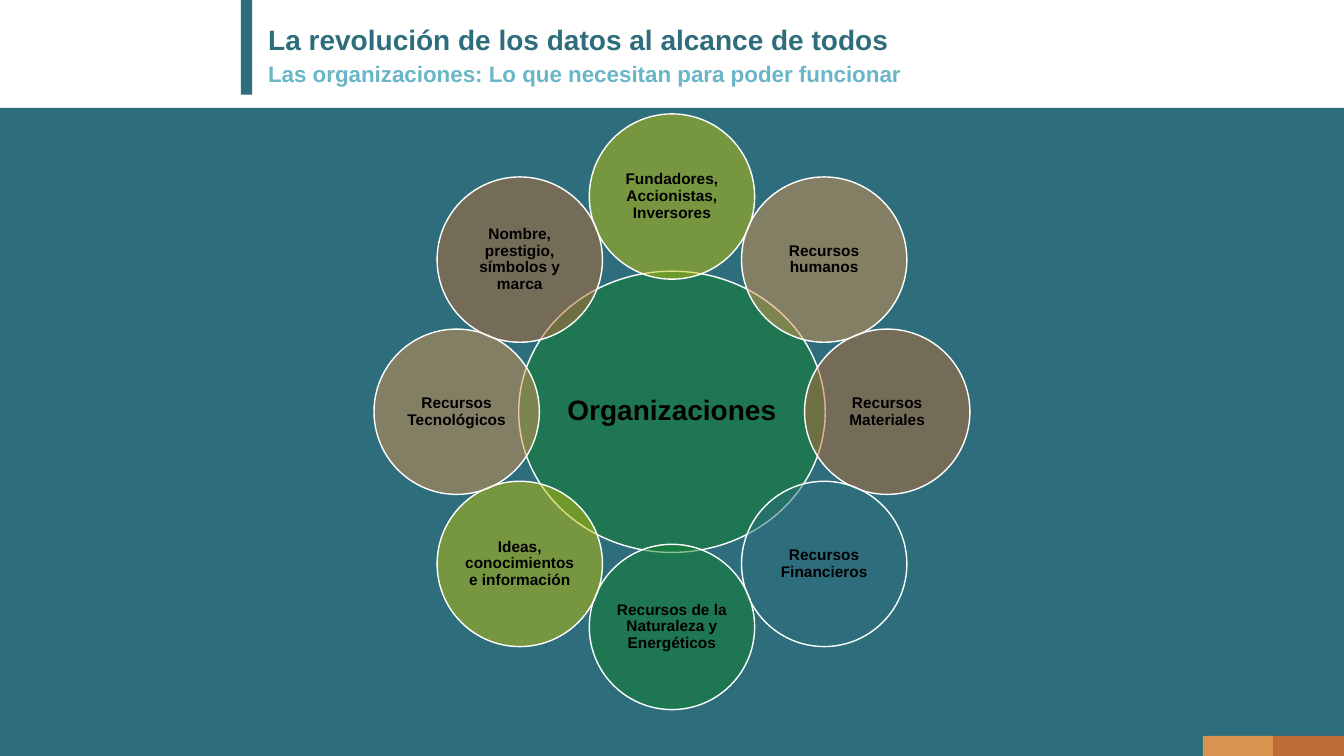
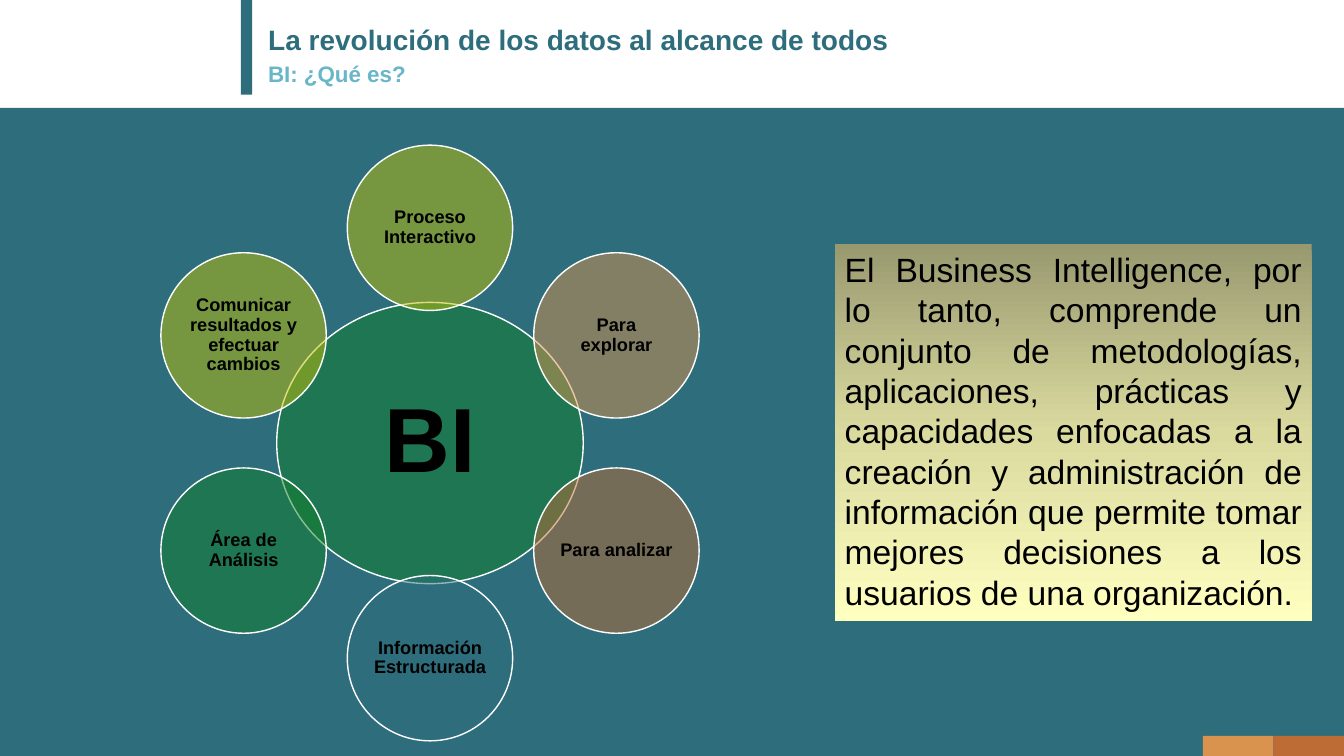
from copy import deepcopy
from itertools import cycle
from math import cos, pi, sin

from pptx import Presentation
from pptx.dml.color import RGBColor
from pptx.enum.shapes import MSO_SHAPE
from pptx.enum.text import MSO_ANCHOR, MSO_AUTO_SIZE, PP_ALIGN
from pptx.oxml.ns import qn
from pptx.util import Pt

PX = 9144  # EMU per px, 100 px to the inch
WIDTH, HEIGHT = 1333, 750
FONT = "Arial"
RECTANGLE, ELLIPSE = MSO_SHAPE.RECTANGLE, MSO_SHAPE.OVAL
TOP, MIDDLE = MSO_ANCHOR.TOP, MSO_ANCHOR.MIDDLE
LEFT, CENTER, JUSTIFY = PP_ALIGN.LEFT, PP_ALIGN.CENTER, PP_ALIGN.JUSTIFY
NO_FIT, GROW = MSO_AUTO_SIZE.NONE, MSO_AUTO_SIZE.SHAPE_TO_FIT_TEXT

COLORS = {
    "teal": "2D6D7C", "sky": "69B6C9", "orange": "DA924F", "rust": "BD6C36",
    "green": "137F2B", "lime": "BFBF04", "white": "FFFFFF", "black": "000000",
    "sand_dark": "999970", "sand": "DADA9F", "sand_light": "FFFFC0",
}
SATELLITE_COLORS = ("lime", "orange", "rust", "teal", "green")
TITLE = "La revolución de los datos al alcance de todos"
TITLE_BOX = (256, 21, 1045, 40)
SUBTITLE_BOX = (256, 58, 1045, 40)

# Wheel proportions
WHEEL = 591
SATELLITE = 164
HUB_WIDTH, HUB_HEIGHT = 304, 279


def rgb(name):
    return RGBColor.from_string(COLORS[name])


def emu(*lengths):
    return [round(length * PX) for length in lengths]


def apply(target, values):
    for name, value in values.items():
        setattr(target, name, value)


def write(box, text, size, color, align, bold=True, spacing=0.9,
          anchor=TOP, inset=None, fit=NO_FIT):
    frame = box.text_frame
    apply(frame, {"word_wrap": True, "auto_size": fit, "vertical_anchor": anchor})
    if inset is not None:
        margin, = emu(inset)
        apply(frame, {f"margin_{side}": margin
                      for side in ("left", "top", "right", "bottom")})
    frame.text = text
    para = frame.paragraphs[0]
    apply(para, {"alignment": align, "line_spacing": spacing})
    span = para.runs[0]
    apply(span.font, {"name": FONT, "size": Pt(size), "bold": bold})
    span.font.color.rgb = rgb(color)


def add_block(page, kind, box, color):
    shape = page.shapes.add_shape(kind, *emu(*box))
    shape.shadow.inherit = False
    shape.fill.solid()
    shape.fill.fore_color.rgb = rgb(color)
    shape.line.fill.background()
    return shape


def add_bands(page, layout):
    """Draw the bands once and hand them to the layout that all slides share."""
    bands = (
        ((239, 0, 11, 94), "teal"),
        ((0, 107, WIDTH, HEIGHT - 107), "teal"),
        ((WIDTH - 140, HEIGHT - 20, 70, 20), "orange"),
        ((WIDTH - 70, HEIGHT - 20, 70, 20), "rust"),
    )
    for box, color in bands:
        layout.shapes.element.append(add_block(page, RECTANGLE, box, color).element)


def add_heading(page, subtitle):
    title = page.shapes.title
    apply(title, dict(zip(("left", "top", "width", "height"), emu(*TITLE_BOX))))
    write(title, TITLE, 20, "teal", LEFT)
    write(page.shapes.add_textbox(*emu(*SUBTITLE_BOX)), subtitle, 16, "sky", LEFT)


def add_disc(page, center, size, color, text, points, inset):
    (x, y), (width, height) = center, size
    box = (x - width / 2, y - height / 2, width, height)
    disc = add_block(page, ELLIPSE, box, color)
    # Half transparent fill
    tint = disc.element.spPr.find(qn("a:solidFill")).find(qn("a:srgbClr"))
    tint.makeelement(qn("a:alpha"), {"val": "50000"})
    tint.append(tint.makeelement(qn("a:alpha"), {"val": "50000"}))
    disc.line.color.rgb = rgb("white")
    disc.line.width = Pt(1)
    write(disc, text, points, "black", CENTER, anchor=MIDDLE, inset=inset)


def add_wheel(page, left, top, hub, hub_points, hub_inset, labels, points):
    """Place a hub and its satellites, clockwise from the top."""
    x, y = left + WHEEL / 2, top + WHEEL / 2
    orbit = (WHEEL - SATELLITE) / 2
    add_disc(page, (x, y), (HUB_WIDTH, HUB_HEIGHT), "green", hub, hub_points, hub_inset)
    for index, (label, color) in enumerate(zip(labels, cycle(SATELLITE_COLORS))):
        angle = 2 * pi * index / len(labels)
        center = (x + orbit * sin(angle), y - orbit * cos(angle))
        add_disc(page, center, (SATELLITE, SATELLITE), color, label, points, 2)


def add_definition(page, box, text):
    panel = add_block(page, RECTANGLE, box, "sand")
    panel.fill.gradient()
    panel.fill.gradient_angle = 270
    stops = panel.element.spPr.find(qn("a:gradFill")).find(qn("a:gsLst"))
    stops.append(deepcopy(stops[-1]))
    shades = ((0, "sand_dark"), (0.5, "sand"), (1, "sand_light"))
    for stop, (position, color) in zip(panel.fill.gradient_stops, shades):
        stop.position = position
        stop.color.rgb = rgb(color)
    write(panel, text, 24, "black", JUSTIFY, bold=False, spacing=1.0, fit=GROW)


def build_needs(page):
    add_heading(page, "Las organizaciones: Lo que necesitan para poder funcionar")
    add_wheel(page, 371, 113, "Organizaciones", 20, 3, (
        "Fundadores, Accionistas, Inversores",
        "Recursos humanos",
        "Recursos Materiales",
        "Recursos Financieros",
        "Recursos de la Naturaleza y Energéticos",
        "Ideas, conocimientos e información",
        "Recursos Tecnológicos",
        "Nombre, prestigio, símbolos y marca",
    ), 11)


def build_meaning(page):
    add_heading(page, "BI: ¿Qué es?")
    add_wheel(page, 131, 144, "BI", 65, 9, (
        "Proceso Interactivo",
        "Para explorar",
        "Para analizar",
        "Información Estructurada",
        "Área de Análisis",
        "Comunicar resultados y efectuar cambios",
    ), 13)
    add_definition(page, (828, 242, 473, 374), (
        "El Business Intelligence, por lo tanto, comprende un conjunto de "
        "metodologías, aplicaciones, prácticas y capacidades enfocadas a la "
        "creación y administración de información que permite tomar mejores "
        "decisiones a los usuarios de una organización."))


def main():
    deck = Presentation()
    deck.slide_width, deck.slide_height = emu(WIDTH, HEIGHT)
    layout = deck.slide_layouts[5]  # title only
    pages = [deck.slides.add_slide(layout) for _ in range(2)]
    add_bands(pages[0], layout)
    for build, page in zip((build_needs, build_meaning), pages):
        build(page)
    deck.save("out.pptx")


if __name__ == "__main__":
    main()
